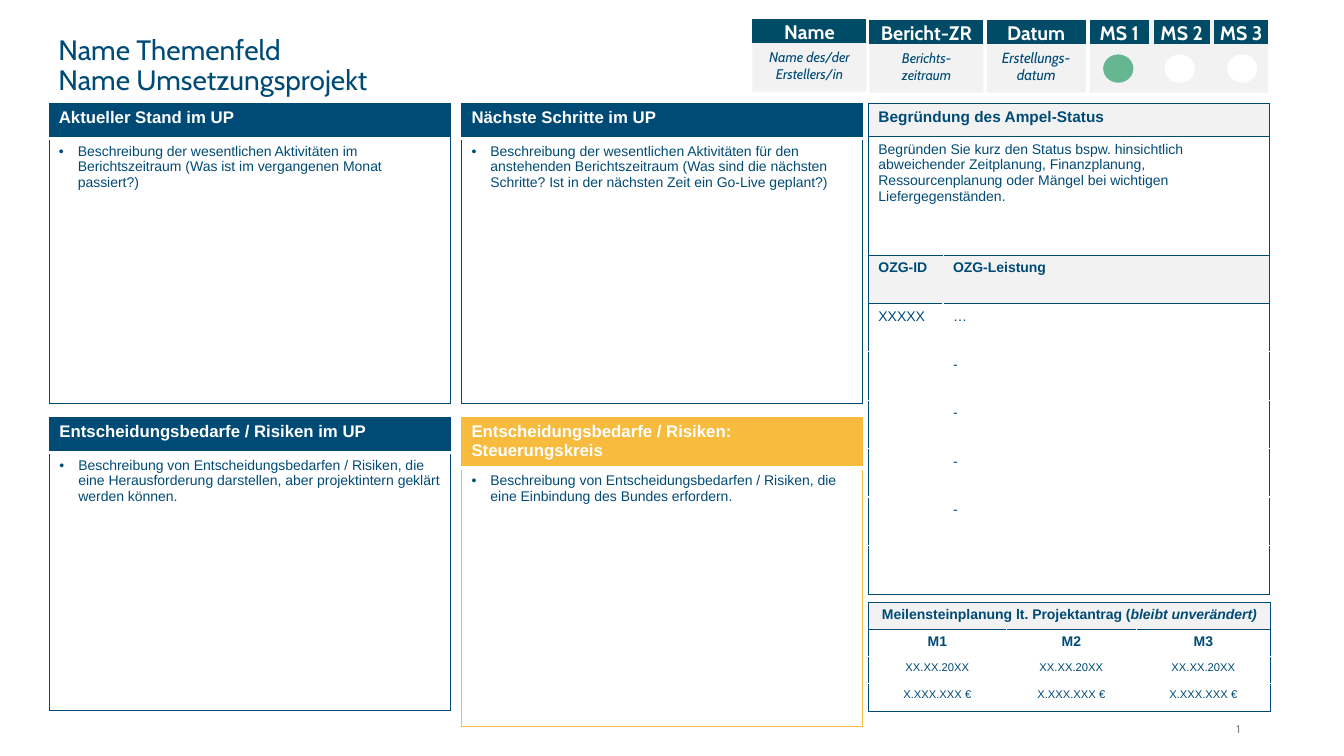
"""Build a one-page project status report with panels, tables and badges."""
from dataclasses import dataclass
from typing import NamedTuple, Optional

from lxml import etree
from pptx import Presentation
from pptx.dml.color import RGBColor
from pptx.enum import shapes, text
from pptx.oxml import ns
from pptx.util import Pt

COLORS = {"navy": "004B76", "petrol": "004B65", "amber": "F7BB3D", "green": "66B692",
          "pale": "F2F2F2", "white": "FFFFFF", "grey": "808080"}


class Edge(NamedTuple):
    color: str
    width: float


NAVY, AMBER, PALE = Edge("navy", 0.25), Edge("amber", 0.25), Edge("pale", 0.25)
WHITE, GAP = Edge("white", 1), Edge("white", 3)


class Borders(NamedTuple):
    left: Optional[Edge] = None
    right: Optional[Edge] = None
    top: Optional[Edge] = None
    bottom: Optional[Edge] = None


@dataclass
class Style:
    size: float
    color: str = "navy"
    bold: bool = False
    italic: bool = False
    face: str = "Arial"


@dataclass
class Cell:
    text: str
    style: Style
    borders: Borders
    fill: Optional[str] = "white"
    centered: bool = False
    bullet: bool = False
    italic_tail: str = ""


@dataclass
class Panel:
    left: float
    top: float
    body_height: float
    color: str
    edge: Edge
    title: str
    body: str


@dataclass
class Badge:
    left: float
    top: float
    width: float
    title: str
    hint: str
    hint_size: float


@dataclass
class Milestone:
    left: float
    width: float
    title: str
    dot_left: float
    dot_color: str


def rgb(name: str) -> RGBColor:
    return RGBColor.from_string(COLORS[name])


def set_font(font, style: Style) -> None:
    font.name, font.size = style.face, Pt(style.size)
    font.bold, font.italic = style.bold, style.italic
    font.color.rgb = rgb(style.color)


def fill_cell(cell, content: Cell) -> None:
    properties = cell._tc.get_or_add_tcPr()
    for side, edge in zip("LRTB", content.borders):
        if edge:
            line = etree.SubElement(properties, ns.qn(f"a:ln{side}"), w=str(Pt(edge.width)))
            solid = etree.SubElement(line, ns.qn("a:solidFill"))
            etree.SubElement(solid, ns.qn("a:srgbClr"), val=COLORS[edge.color])
    if content.fill:
        cell.fill.solid()
        cell.fill.fore_color.rgb = rgb(content.fill)
    else:
        cell.fill.background()
    para = cell.text_frame.paragraphs[0]
    if content.bullet:
        indent = para._p.get_or_add_pPr()
        indent.set("marL", str(Pt(13.5)))
        indent.set("indent", str(-Pt(13.5)))
        etree.SubElement(indent, ns.qn("a:buFont"), typeface="Arial")
        etree.SubElement(indent, ns.qn("a:buChar"), char="•")
    if content.centered:
        para.alignment = text.PP_ALIGN.CENTER
    set_font(para.font, content.style)
    if content.text:
        para.add_run().text = content.text
    if content.italic_tail:
        span = para.add_run()
        span.text, span.font.italic = content.italic_tail, True


def add_grid(page, left: float, top: float, widths: list[float], heights: list[float],
             rows: list[list[Cell]]):
    table = page.shapes.add_table(len(heights), len(widths), Pt(left), Pt(top),
                                  Pt(sum(widths)), Pt(sum(heights))).table
    table.first_row = table.horz_banding = False
    for column, width in zip(table.columns, widths):
        column.width = Pt(width)
    for row, height, contents in zip(table.rows, heights, rows):
        row.height = Pt(height)
        for cell, content in zip(row.cells, contents):
            fill_cell(cell, content)
    return table


def add_panel(page, panel: Panel) -> None:
    edge = panel.edge
    head = Cell(panel.title, Style(12, "white", True), Borders(edge, edge, edge, GAP), panel.color)
    body = Cell(panel.body, Style(10), Borders(edge, edge, WHITE, edge), None, bullet=True)
    add_grid(page, panel.left, panel.top, [286.6], [25.2, panel.body_height], [[head], [body]])


def add_block(page, kind, left: float, top: float, width: float, height: float, fill: str,
              words: str = "", style: Optional[Style] = None, margins=(0, 0, 0, 0)) -> None:
    block = page.shapes.add_shape(kind, Pt(left), Pt(top), Pt(width), Pt(height))
    block.shadow.inherit = False
    block.fill.solid()
    block.fill.fore_color.rgb = rgb(fill)
    block.line.fill.background()
    if style:
        frame = block.text_frame
        frame.word_wrap, frame.vertical_anchor = True, text.MSO_ANCHOR.MIDDLE
        frame.margin_left, frame.margin_top, frame.margin_right, frame.margin_bottom = map(Pt, margins)
        para = frame.paragraphs[0]
        para.alignment = text.PP_ALIGN.CENTER
        set_font(para.font, style)
        para.add_run().text = words


def add_label(page, left: float, top: float, width: float, words: str) -> None:
    add_block(page, shapes.MSO_SHAPE.FLOWCHART_PROCESS, left, top, width, 17.3, "petrol",
              words, Style(14, "white", True, face="Cabin"))


def add_title(page) -> None:
    box = page.shapes.add_textbox(Pt(34.6), Pt(22.3), Pt(589), Pt(51.1))
    box.text_frame.word_wrap = True
    box.text_frame.text = "Name Themenfeld\nName Umsetzungsprojekt"
    for para in box.text_frame.paragraphs:
        para.line_spacing = 0.9
        set_font(para.font, Style(20, face="Cabin"))


def add_page_number(page) -> None:
    box = page.shapes.add_textbox(Pt(859.7), Pt(513.4), Pt(33.8), Pt(15.8))
    box.text_frame.word_wrap, box.text_frame.vertical_anchor = True, text.MSO_ANCHOR.BOTTOM
    para = box.text_frame.paragraphs[0]
    para.alignment = text.PP_ALIGN.RIGHT
    span = para.add_run()
    span.text = "1"
    set_font(span.font, Style(8, "grey", face="Cabin"))
    field = etree.SubElement(para._p, ns.qn("a:fld"), type="slidenum",
                             id="{B6F15528-21DE-4FAA-801E-634DDDAF4B2B}")
    field.extend(list(span._r))
    para._p.remove(span._r)


def add_milestone_plan(page) -> None:
    head = Cell("Meilensteinplanung lt. Projektantrag (", Style(10, bold=True),
                Borders(NAVY, NAVY, NAVY, NAVY), "pale", True, italic_tail="bleibt unverändert)")
    blank = Cell("", head.style, head.borders, "pale")
    rows = [[head, blank, blank]]
    lines = [(["M1", "M2", "M3"], Style(10, bold=True)),
             (["XX.XX.20XX"] * 3, Style(8)), (["X.XXX.XXX €"] * 3, Style(8))]
    for row, (words, style) in enumerate(lines):
        rows.append([Cell(word, style, Borders(WHITE if col else NAVY, NAVY if col == 2 else WHITE,
                                               WHITE if row else NAVY, NAVY if row == 2 else WHITE),
                          centered=True) for col, word in enumerate(words)])
    table = add_grid(page, 620.6, 429.8, [98.6, 92.9, 95.8], [19.5] * 4, rows)
    table.cell(0, 0).merge(table.cell(0, 2))


def add_services(page) -> None:
    entries = [("OZG-ID", "OZG-Leistung"), ("XXXXX", "…")] + [("", "-")] * 4 + [("", "")]
    rows = []
    for row, (code, service) in enumerate(entries):
        inner, fill = (WHITE, "white") if row else (PALE, "pale")
        top = NAVY if row < 2 else None
        bottom = NAVY if row in (0, 6) else None
        style = Style(10, bold=row == 0)
        rows.append([Cell(code, style, Borders(NAVY, inner, top, bottom), fill),
                     Cell(service, style, Borders(inner, NAVY, top, bottom), fill)])
    add_grid(page, 620.6, 182.2, [53.3, 233.3], [34.56] * 7, rows)


def main() -> None:
    deck = Presentation()
    deck.slide_width, deck.slide_height = Pt(960.48), Pt(540)
    page = deck.slides.add_slide(deck.slide_layouts[6])
    add_page_number(page)
    add_title(page)
    add_milestone_plan(page)
    frame = Borders(NAVY, NAVY, NAVY, NAVY)
    reason = ("Begründen Sie kurz den Status bspw. hinsichtlich abweichender Zeitplanung, Finanzplanung, "
              "Ressourcenplanung oder Mängel bei wichtigen Liefergegenständen.")
    add_grid(page, 620.6, 73.7, [286.6], [23.8, 84.7],
             [[Cell("Begründung des Ampel-Status", Style(11, bold=True), frame, "pale")],
              [Cell(reason, Style(10), frame)]])
    for panel in (
        Panel(34.9, 73.7, 189.4, "navy", NAVY, "Aktueller Stand im UP",
              "Beschreibung der wesentlichen Aktivitäten im Berichtszeitraum (Was ist im vergangenen Monat passiert?)"),
        Panel(329.8, 73.7, 189.4, "navy", NAVY, "Nächste Schritte im UP",
              "Beschreibung der wesentlichen Aktivitäten für den anstehenden Berichtszeitraum "
              "(Was sind die nächsten Schritte? Ist in der nächsten Zeit ein Go-Live geplant?)"),
        Panel(35.3, 298.1, 184.3, "navy", NAVY, "Entscheidungsbedarfe / Risiken im UP",
              "Beschreibung von Entscheidungsbedarfen / Risiken, die eine Herausforderung darstellen, "
              "aber projektintern geklärt werden können."),
        Panel(329.8, 298.1, 184.3, "amber", AMBER, "Entscheidungsbedarfe / Risiken: Steuerungskreis",
              "Beschreibung von Entscheidungsbedarfen / Risiken, die eine Einbindung des Bundes erfordern."),
    ):
        add_panel(page, panel)
    add_services(page)
    add_block(page, shapes.MSO_SHAPE.RECTANGLE, 779, 14.4, 127.4, 51.8, "pale")
    for stone in (Milestone(779, 41.8, "MS 1", 788.4, "green"),
                  Milestone(824.4, 40.3, "MS 2", 832.3, "white"),
                  Milestone(867.6, 38.9, "MS 3", 877, "white")):
        add_label(page, stone.left, 14.4, stone.width, stone.title)
        add_block(page, shapes.MSO_SHAPE.OVAL, stone.dot_left, 38.9, 21.6, 20.2, stone.dot_color)
    for badge in (Badge(705.2, 14.4, 70.6, "Datum", "Erstellungs-datum", 10.5),
                  Badge(621.4, 14.4, 81.4, "Bericht-ZR", "Berichts-zeitraum", 10),
                  Badge(537.8, 13.7, 81.4, "Name", "Name des/der Erstellers/in", 10)):
        add_block(page, shapes.MSO_SHAPE.RECTANGLE, badge.left, badge.top, badge.width, 51.8, "pale",
                  badge.hint, Style(badge.hint_size, italic=True, face="Cabin"), (7.2, 17.3, 7.2, 3.6))
        add_label(page, badge.left, badge.top, badge.width, badge.title)
    deck.save("out.pptx")


if __name__ == "__main__":
    main()
